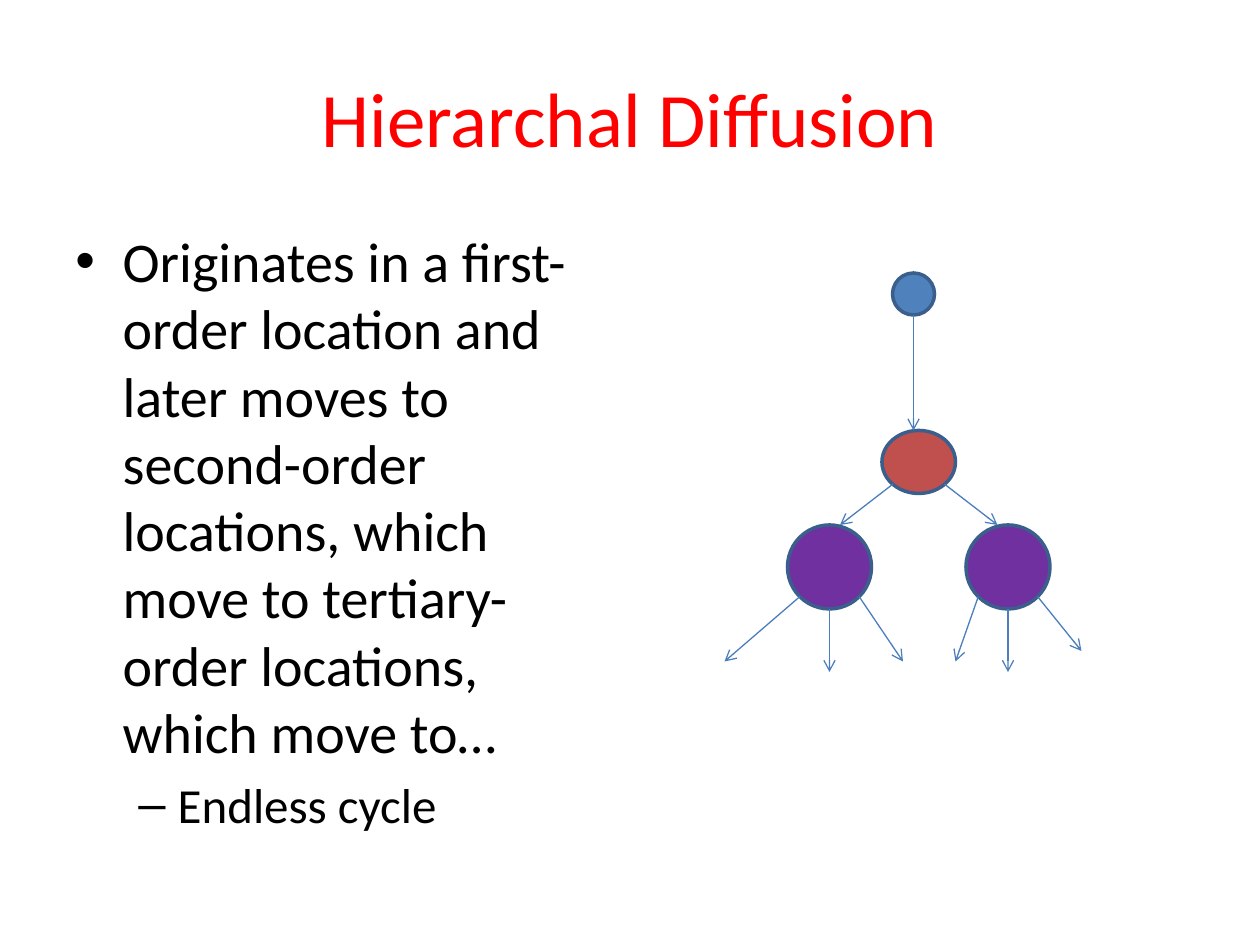
"""Build the Hierarchal Diffusion slide with its bullets and tree of locations."""
import pptx
import pptx.dml.color
import pptx.enum.shapes
import pptx.enum.text
import pptx.oxml.ns
import pptx.util
from lxml import etree

Pt = pptx.util.Pt
RGBColor = pptx.dml.color.RGBColor
qn = pptx.oxml.ns.qn

FONT = "Calibri"
RED = RGBColor(0xFF, 0x00, 0x00)
BLACK = RGBColor(0x00, 0x00, 0x00)
OUTLINE = RGBColor(0x3A, 0x5F, 0x8C)
ARROW = RGBColor(0x4B, 0x7E, 0xBC)
FIRST_ORDER = RGBColor(0x4F, 0x81, 0xBD)
SECOND_ORDER = RGBColor(0xC0, 0x50, 0x4D)
TERTIARY_ORDER = RGBColor(0x70, 0x30, 0xA0)


def add_text(paragraph, text, size, color):
    run = paragraph.add_run()
    run.text = text
    run.font.name = FONT
    run.font.size = Pt(size)
    run.font.color.rgb = color


presentation = pptx.Presentation()
presentation.slide_width = Pt(720)
presentation.slide_height = Pt(540)
slide = presentation.slides.add_slide(presentation.slide_layouts[5])

title = slide.shapes.title
title.left, title.top, title.width, title.height = Pt(36), Pt(21.6), Pt(648), Pt(90)
title.text_frame.vertical_anchor = pptx.enum.text.MSO_ANCHOR.MIDDLE
title_paragraph = title.text_frame.paragraphs[0]
title_paragraph.alignment = pptx.enum.text.PP_ALIGN.CENTER
add_text(title_paragraph, "Hierarchal Diffusion", 44, RED)

body = slide.shapes.add_textbox(Pt(36), Pt(126), Pt(324), Pt(356.4))
body.text_frame.word_wrap = True
bullets = [
    ("Originates in a first-order location and later moves to second-order "
     "locations, which move to tertiary-order locations, which move to…",
     0, 32, "•", 27, -27),
    ("Endless cycle", 1, 28, "–", 58.5, -22.5),
]
for text, level, size, bullet, margin, indent in bullets:
    paragraph = body.text_frame.paragraphs[0] if level == 0 else body.text_frame.add_paragraph()
    paragraph.level = level
    paragraph.space_before = Pt(size * 0.2)
    add_text(paragraph, text, size, BLACK)
    properties = paragraph._p.get_or_add_pPr()
    properties.set("marL", str(Pt(margin)))
    properties.set("indent", str(Pt(indent)))
    etree.SubElement(properties, qn("a:buFont")).set("typeface", "Arial")
    etree.SubElement(properties, qn("a:buChar")).set("char", bullet)

locations = [
    (510, 156, 24, 24, FIRST_ORDER),
    (504, 246, 42, 36, SECOND_ORDER),
    (450, 300, 48, 48, TERTIARY_ORDER),
    (552, 300, 48, 48, TERTIARY_ORDER),
]
for left, top, width, height, color in locations:
    shape = slide.shapes.add_shape(
        pptx.enum.shapes.MSO_SHAPE.OVAL, Pt(left), Pt(top), Pt(width), Pt(height))
    shape.shadow.inherit = False
    shape.fill.solid()
    shape.fill.fore_color.rgb = color
    shape.line.color.rgb = OUTLINE
    shape.line.width = Pt(2)

arrows = [
    (522, 180, 522, 246),
    (510.2, 276.7, 480, 300),
    (539.8, 276.7, 570, 300),
    (457, 341, 414, 378),
    (474, 348, 474, 384),
    (491, 341, 516, 378),
    (559, 341, 546, 378),
    (576, 348, 576, 384),
    (593, 341, 618, 372),
]
for ends in arrows:
    connector = slide.shapes.add_connector(
        pptx.enum.shapes.MSO_CONNECTOR.STRAIGHT, *[Pt(value) for value in ends])
    connector.line.color.rgb = ARROW
    connector.line.width = Pt(0.75)
    line = connector.line._get_or_add_ln()
    etree.SubElement(line, qn("a:tailEnd")).set("type", "arrow")
    etree.SubElement(connector._element.spPr, qn("a:effectLst"))

presentation.save("out.pptx")
